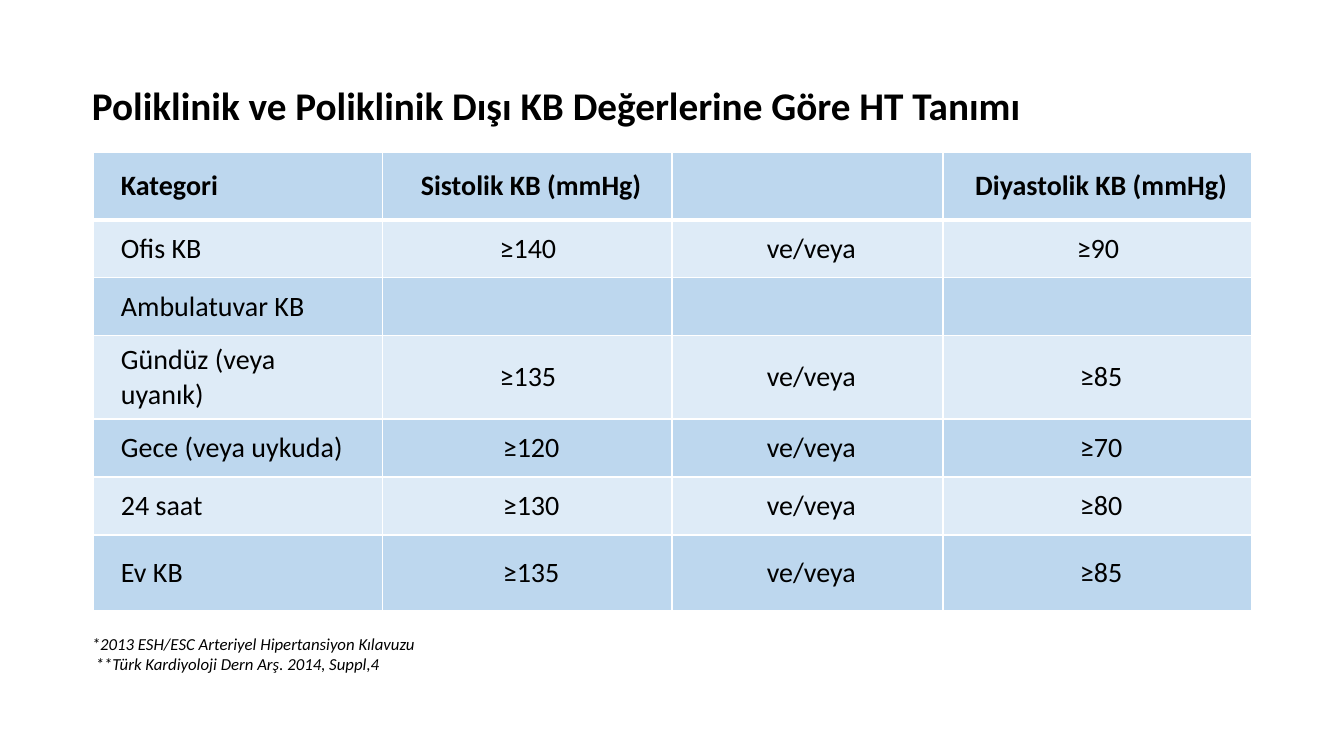
"""Build the slide that defines hypertension by office and out-of-office readings."""
from dataclasses import dataclass

from lxml import etree
from pptx import Presentation
from pptx import util as u
from pptx.dml import color
from pptx.enum import text
from pptx.oxml import ns


@dataclass(frozen=True)
class Theme:
    font: str = "Calibri"
    ink: str = "000000"
    border: str = "FFFFFF"
    dark_band: str = "BDD7EE"
    light_band: str = "DEEBF7"
    title_size: float = 28
    table_size: float = 20
    source_size: float = 12
    thin: float = 1
    thick: float = 3


class SlideBuilder:
    def __init__(self, slide, theme):
        self.slide = slide
        self.theme = theme

    def style(self, paragraph, size, bold=False, italic=False, align=text.PP_ALIGN.LEFT):
        paragraph.alignment = align
        font = paragraph.font
        font.name, font.size = self.theme.font, u.Pt(size)
        font.bold, font.italic = bold, italic
        font.color.rgb = color.RGBColor.from_string(self.theme.ink)

    def title(self, wording, left, top, width, height):
        heading = self.slide.shapes.title
        heading.left, heading.top = u.Pt(left), u.Pt(top)
        heading.width, heading.height = u.Pt(width), u.Pt(height)
        frame = heading.text_frame
        frame.text = wording
        frame.word_wrap = True
        frame.auto_size = text.MSO_AUTO_SIZE.NONE
        frame.vertical_anchor = text.MSO_ANCHOR.TOP
        self.style(frame.paragraphs[0], self.theme.title_size, bold=True)

    def sources(self, lines, left, top, width, height):
        box = self.slide.shapes.add_textbox(u.Pt(left), u.Pt(top), u.Pt(width), u.Pt(height))
        frame = box.text_frame
        frame.word_wrap = True
        frame.text = "\n".join(lines)
        for paragraph in frame.paragraphs:
            self.style(paragraph, self.theme.source_size, italic=True)

    def borders(self, cell, top, bottom):
        properties = cell._tc.get_or_add_tcPr()
        edges = {"lnL": self.theme.thin, "lnR": self.theme.thin, "lnT": top, "lnB": bottom}
        for position, (edge, width) in enumerate(edges.items()):
            line = etree.Element(ns.qn(f"a:{edge}"), w=str(u.Pt(width)))
            fill = etree.SubElement(line, ns.qn("a:solidFill"))
            etree.SubElement(fill, ns.qn("a:srgbClr"), val=self.theme.border)
            properties.insert(position, line)

    def table(self, rows, left, top, widths, heights):
        theme = self.theme
        grid = self.slide.shapes.add_table(
            len(rows), len(widths), u.Pt(left), u.Pt(top), u.Pt(sum(widths)), u.Pt(sum(heights))
        ).table
        for column, width in zip(grid.columns, widths):
            column.width = u.Pt(width)
        for r, (row, height) in enumerate(zip(rows, heights)):
            grid.rows[r].height = u.Pt(height)
            band = theme.light_band if r % 2 else theme.dark_band
            for c, wording in enumerate(row):
                cell = grid.cell(r, c)
                cell.text = wording
                cell.vertical_anchor = text.MSO_ANCHOR.MIDDLE
                cell.margin_left, cell.margin_right = u.Pt(20), u.Pt(14.4)
                cell.margin_top = cell.margin_bottom = u.Pt(3.6)
                cell.fill.solid()
                cell.fill.fore_color.rgb = color.RGBColor.from_string(band)
                self.borders(
                    cell,
                    top=theme.thick if r == 1 else theme.thin,
                    bottom=theme.thick if r == 0 else theme.thin,
                )
                self.style(
                    cell.text_frame.paragraphs[0],
                    theme.table_size,
                    bold=r == 0,
                    align=text.PP_ALIGN.CENTER if c else text.PP_ALIGN.LEFT,
                )


def main():
    deck = Presentation()
    deck.slide_width, deck.slide_height = u.Pt(960), u.Pt(540)
    builder = SlideBuilder(deck.slides.add_slide(deck.slide_layouts[5]), Theme())
    builder.title(
        "Poliklinik ve Poliklinik Dışı KB Değerlerine Göre HT Tanımı", 58.5, 54.7, 720, 41
    )
    thresholds = [
        ("Kategori", "Sistolik KB (mmHg)", "", "Diyastolik KB (mmHg)"),
        ("Ofis KB", "≥140 ", "ve/veya", "≥90 "),
        ("Ambulatuvar KB", "", "", ""),
        ("Gündüz (veya uyanık)", "≥135 ", "ve/veya", "≥85"),
        ("Gece (veya uykuda)", "≥120", "ve/veya", "≥70"),
        ("24 saat", "≥130", "ve/veya", "≥80"),
        ("Ev KB", "≥135", "ve/veya", "≥85"),
    ]
    builder.table(
        thresholds,
        left=66.4,
        top=109,
        widths=[206.8, 206.8, 193.6, 220.4],
        heights=[48, 41.4, 41.4, 59.6, 41.4, 41.4, 54],
    )
    builder.sources(
        [
            "*2013 ESH/ESC Arteriyel Hipertansiyon Kılavuzu",
            " **Türk Kardiyoloji Dern Arş. 2014, Suppl,4",
        ],
        58.5, 449.3, 420.5, 36,
    )
    deck.save("out.pptx")


if __name__ == "__main__":
    main()
